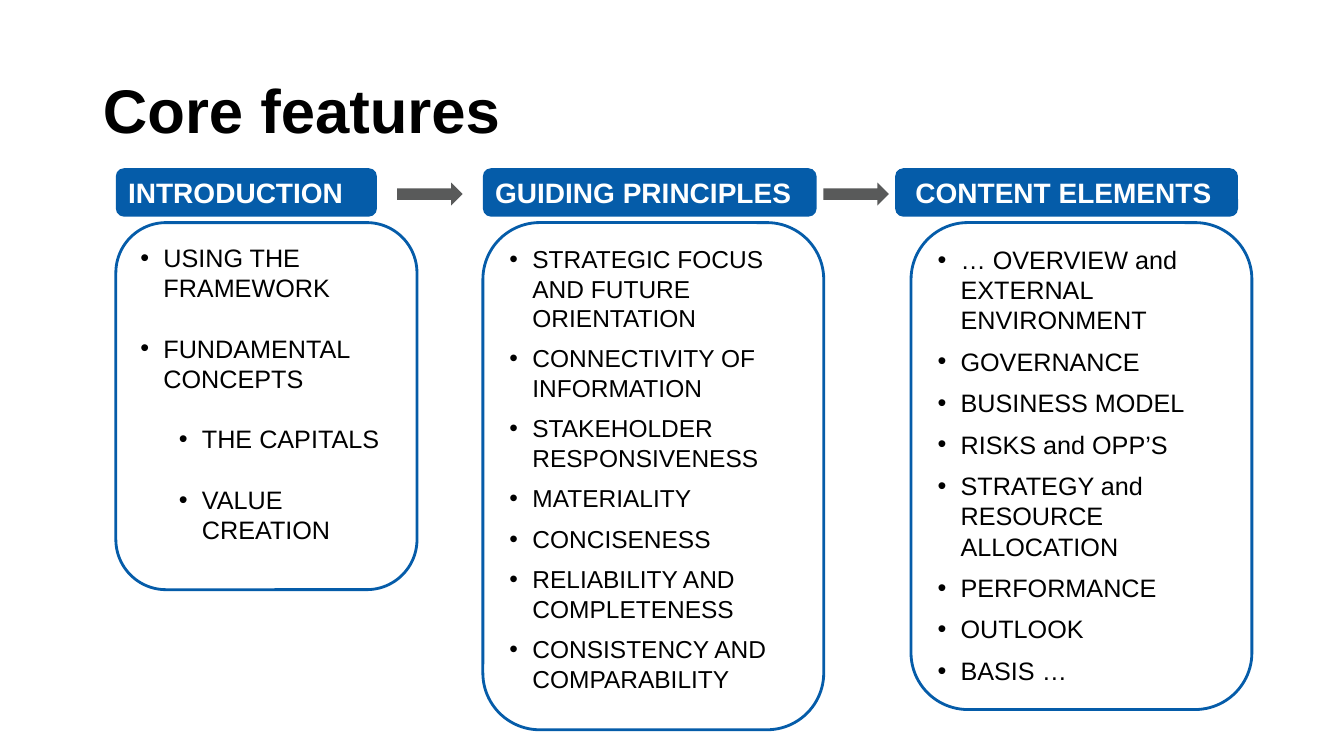
"""Build the "Core features" slide: three headed lists linked by arrows."""
from dataclasses import dataclass

from lxml import etree
from pptx import Presentation
from pptx.dml.color import RGBColor
from pptx.enum.shapes import MSO_SHAPE
from pptx.enum.text import MSO_ANCHOR, PP_ALIGN
from pptx.oxml.ns import qn
from pptx.shapes.autoshape import Shape
from pptx.slide import Slide
from pptx.text.text import _Paragraph as Paragraph
from pptx.util import Cm, Pt

ROUNDED = MSO_SHAPE.ROUNDED_RECTANGLE
ARROW = MSO_SHAPE.RIGHT_ARROW
TOP, MIDDLE = MSO_ANCHOR.TOP, MSO_ANCHOR.MIDDLE
LEFT = PP_ALIGN.LEFT

HEADER_TOP, HEADER_HEIGHT = 4.24, 1.22
LIST_TOP = 5.61
ARROW_TOP, ARROW_WIDTH, ARROW_HEIGHT = 4.6, 1.65, 0.58
ARROW_LEFTS = (10.01, 20.75)
HANGING = 0.58
LEVEL_STEP = 0.97


@dataclass(frozen=True)
class Theme:
    font: str = "Arial"
    blue: RGBColor = RGBColor(0x05, 0x5C, 0xA9)
    grey: RGBColor = RGBColor(0x59, 0x5A, 0x5A)
    white: RGBColor = RGBColor(0xFF, 0xFF, 0xFF)
    black: RGBColor = RGBColor(0, 0, 0)
    title_size: float = 44
    header_size: float = 20
    outline: float = 2
    list_opacity: int = 55


THEME = Theme()


@dataclass(frozen=True)
class Item:
    text: str
    level: int = 0


@dataclass(frozen=True)
class Column:
    header: str
    header_left: float
    header_width: float
    list_left: float
    list_width: float
    list_height: float
    items: tuple[Item, ...]
    size: float = 18
    gap: float = 8
    header_inset: float = 0.25


COLUMNS = (
    Column("INTRODUCTION", 2.92, 6.58, 2.92, 7.59, 9.25, (
        Item("USING THE FRAMEWORK"),
        Item("FUNDAMENTAL CONCEPTS"),
        Item("THE CAPITALS", 1),
        Item("VALUE CREATION", 1),
    ), gap=21.6),
    Column("GUIDING PRINCIPLES", 12.17, 8.41, 12.17, 8.59, 12.78, (
        Item("STRATEGIC FOCUS AND FUTURE ORIENTATION"),
        Item("CONNECTIVITY OF INFORMATION"),
        Item("STAKEHOLDER RESPONSIVENESS"),
        Item("MATERIALITY"),
        Item("CONCISENESS"),
        Item("RELIABILITY AND COMPLETENESS"),
        Item("CONSISTENCY AND COMPARABILITY"),
    ), size=17.5),
    Column("CONTENT ELEMENTS", 22.56, 8.64, 22.96, 8.59, 12.27, (
        Item("… OVERVIEW and EXTERNAL ENVIRONMENT"),
        Item("GOVERNANCE"),
        Item("BUSINESS MODEL"),
        Item("RISKS and OPP’S"),
        Item("STRATEGY and RESOURCE ALLOCATION"),
        Item("PERFORMANCE"),
        Item("OUTLOOK"),
        Item("BASIS …"),
    ), header_inset=0.45),
)


def write(paragraph: Paragraph, text: str, size: float, color: RGBColor,
          bold: bool = False) -> None:
    paragraph.text = text
    paragraph.alignment = LEFT
    for run in paragraph.runs:
        run.font.name = THEME.font
        run.font.size = Pt(size)
        run.font.bold = bold
        run.font.color.rgb = color


def add_filled(slide: Slide, kind: MSO_SHAPE, left: float, top: float, width: float,
               height: float, color: RGBColor) -> Shape:
    shape = slide.shapes.add_shape(kind, Cm(left), Cm(top), Cm(width), Cm(height))
    shape.shadow.inherit = False
    shape.fill.solid()
    shape.fill.fore_color.rgb = color
    shape.line.fill.background()
    shape.text_frame.word_wrap = True
    shape.text_frame.vertical_anchor = TOP
    return shape


def add_bullet(paragraph: Paragraph, level: int) -> None:
    paragraph.level = level
    properties = paragraph._p.get_or_add_pPr()
    properties.set("marL", str(Cm(HANGING + level * LEVEL_STEP)))
    properties.set("indent", str(-Cm(HANGING)))
    etree.SubElement(properties, qn("a:buFont")).set("typeface", THEME.font)
    etree.SubElement(properties, qn("a:buChar")).set("char", "•")


def add_header(slide: Slide, column: Column) -> None:
    header = add_filled(slide, ROUNDED, column.header_left, HEADER_TOP,
                        column.header_width, HEADER_HEIGHT, THEME.blue)
    header.text_frame.margin_left = Cm(column.header_inset)
    write(header.text_frame.paragraphs[0], column.header, THEME.header_size,
          THEME.white, bold=True)


def add_list(slide: Slide, column: Column) -> None:
    box = add_filled(slide, ROUNDED, column.list_left, LIST_TOP,
                     column.list_width, column.list_height, THEME.white)
    fill_color = box.element.spPr.find(qn("a:solidFill")).find(qn("a:srgbClr"))
    alpha = etree.SubElement(fill_color, qn("a:alpha"))
    alpha.set("val", str(THEME.list_opacity * 1000))
    box.line.color.rgb = THEME.blue
    box.line.width = Pt(THEME.outline)
    frame = box.text_frame
    for index, item in enumerate(column.items):
        paragraph = frame.add_paragraph() if index else frame.paragraphs[0]
        write(paragraph, item.text, column.size, THEME.black)
        paragraph.space_after = Pt(column.gap)
        add_bullet(paragraph, item.level)


def add_title(slide: Slide, text: str) -> None:
    title = slide.shapes.title
    title.left, title.top = Cm(2.34), Cm(1.02)
    title.width, title.height = Cm(29.21), Cm(3.68)
    title.text_frame.vertical_anchor = MIDDLE
    paragraph = title.text_frame.paragraphs[0]
    write(paragraph, text, THEME.title_size, THEME.black, bold=True)
    paragraph.line_spacing = 0.9


def main() -> None:
    presentation = Presentation()
    presentation.slide_width, presentation.slide_height = Cm(33.87), Cm(19.05)
    slide = presentation.slides.add_slide(presentation.slide_layouts[5])
    add_title(slide, "Core features")
    for column in COLUMNS:
        add_header(slide, column)
        add_list(slide, column)
    for left in ARROW_LEFTS:
        add_filled(slide, ARROW, left, ARROW_TOP, ARROW_WIDTH, ARROW_HEIGHT, THEME.grey)
    presentation.save("out.pptx")


if __name__ == "__main__":
    main()
